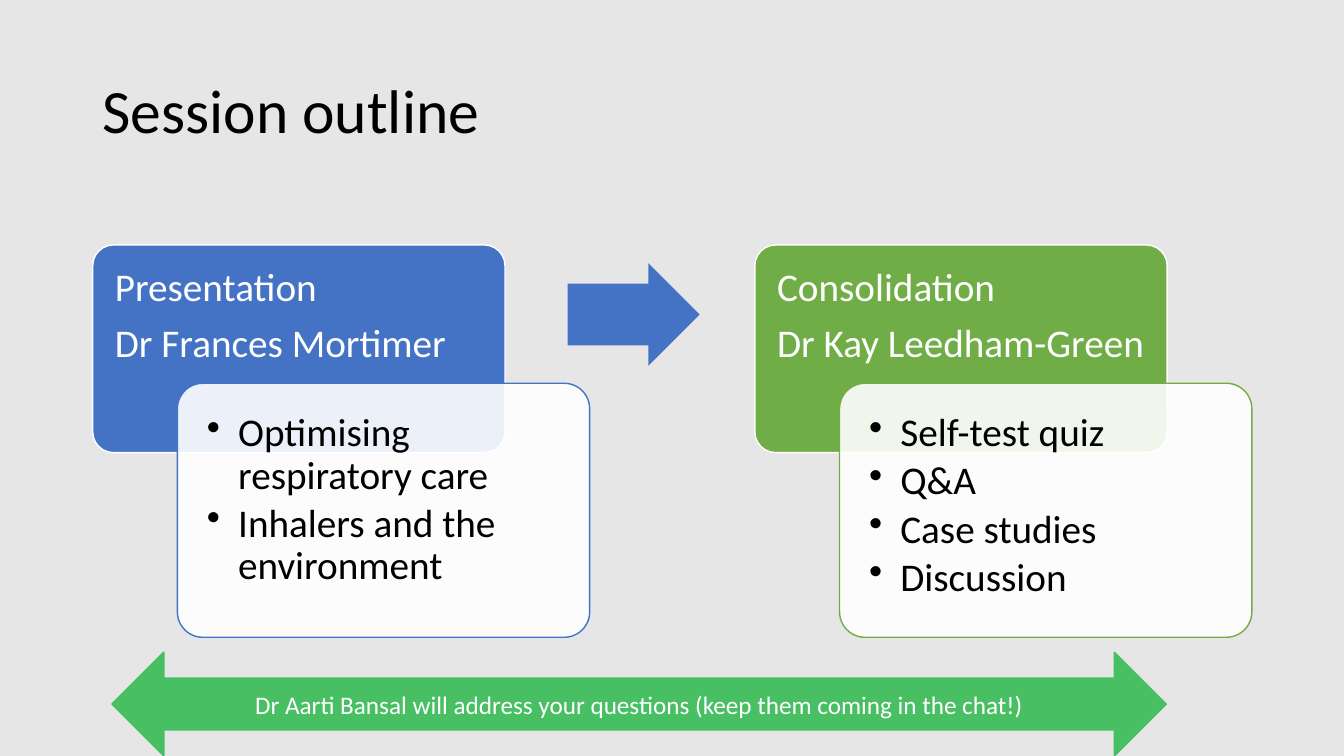
from lxml import etree
from pptx import Presentation
from pptx.dml.color import RGBColor
from pptx.enum.shapes import MSO_SHAPE
from pptx.enum.text import MSO_ANCHOR, PP_ALIGN
from pptx.oxml.ns import qn
from pptx.util import Inches, Pt

ROUNDED = MSO_SHAPE.ROUNDED_RECTANGLE
RIGHT_ARROW = MSO_SHAPE.RIGHT_ARROW
DOUBLE_ARROW = MSO_SHAPE.LEFT_RIGHT_ARROW
TOP, MIDDLE = MSO_ANCHOR.TOP, MSO_ANCHOR.MIDDLE
LEFT, CENTER = PP_ALIGN.LEFT, PP_ALIGN.CENTER

BLACK, WHITE, BACKGROUND = "000000", "FFFFFF", "E7E6E6"
BLUE, GREEN, BRIGHT_GREEN = "4472C4", "70AD47", "49BF64"

# Shares of the slide, in percent
MARGIN = 6.9
CARD_STEP = 49.27
CARD_WIDTH = 30.68
HEADER_TOP, HEADER_HEIGHT = 32.4, 27.47
DETAIL_SHIFT, DETAIL_TOP, DETAIL_HEIGHT = 6.3, 50.7, 33.6

CARDS = [
    (BLUE, ["Presentation", "Dr Frances Mortimer"],
     ["Optimising respiratory care", "Inhalers and the environment"]),
    (GREEN, ["Consolidation", "Dr Kay Leedham-Green"],
     ["Self-test quiz", "Q&A", "Case studies", "Discussion"]),
]


def rgb(hex_color):
    return RGBColor.from_string(hex_color)


class SlideBuilder:
    font = "Calibri"
    body_size = 28

    def __init__(self, prs):
        self.prs = prs
        self.slide = prs.slides.add_slide(prs.slide_layouts[6])
        background = self.slide.background.fill
        background.solid()
        background.fore_color.rgb = rgb(BACKGROUND)

    def place(self, left, top, width, height):
        """Turn percentages of the slide into lengths."""
        across, down = self.prs.slide_width / 100, self.prs.slide_height / 100
        return (round(left * across), round(top * down),
                round(width * across), round(height * down))

    def set_text(self, shape, lines, size, color, anchor=TOP, align=LEFT,
                 inset=(0.1, 0.05, 0.1, 0.05), spacing=0.9, after=0, indent=0):
        """Fill a shape with paragraphs, bulleted when indent is given."""
        frame = shape.text_frame
        frame.word_wrap = True
        frame.vertical_anchor = anchor
        (frame.margin_left, frame.margin_top,
         frame.margin_right, frame.margin_bottom) = map(Inches, inset)
        for number, line in enumerate(lines):
            paragraph = frame.add_paragraph() if number else frame.paragraphs[0]
            paragraph.text = line
            paragraph.alignment = align
            paragraph.line_spacing = spacing
            paragraph.space_after = Pt(after)
            paragraph.font.name = self.font
            paragraph.font.size = Pt(size)
            paragraph.font.color.rgb = rgb(color)
            if indent:
                self.bullet(paragraph, indent)

    def bullet(self, paragraph, indent):
        properties = paragraph.font._element.getparent()
        properties.set("marL", str(Inches(indent)))
        properties.set("indent", str(-Inches(indent)))
        mark = etree.Element(qn("a:buChar"), char="•")
        paragraph.font._element.addprevious(mark)

    def title(self, text, *area):
        box = self.slide.shapes.add_textbox(*self.place(*area))
        self.set_text(box, [text], 44, BLACK, anchor=MIDDLE)

    def shape(self, kind, area, fill, line=None, adjustments=(), opacity=100):
        shape = self.slide.shapes.add_shape(kind, *self.place(*area))
        shape.shadow.inherit = False
        for number, value in enumerate(adjustments):
            shape.adjustments[number] = value
        shape.fill.solid()
        shape.fill.fore_color.rgb = rgb(fill)
        if opacity < 100:
            color = shape.fill._xPr.find(".//" + qn("a:srgbClr"))
            etree.SubElement(color, qn("a:alpha"), val=str(opacity * 1000))
        if line:
            shape.line.color.rgb = rgb(line)
            shape.line.width = Pt(1)
        else:
            shape.line.fill.background()
        return shape

    def card(self, left, color, heading, points):
        """Draw a coloured header with a bulleted panel overlapping it."""
        header = self.shape(ROUNDED, (left, HEADER_TOP, CARD_WIDTH, HEADER_HEIGHT),
                            color, WHITE, [0.1])
        self.set_text(header, heading, self.body_size, WHITE,
                      inset=(0.16, 0.16, 0.12, 0.12), after=9.8)
        detail = self.shape(
            ROUNDED, (left + DETAIL_SHIFT, DETAIL_TOP, CARD_WIDTH, DETAIL_HEIGHT),
            WHITE, color, [0.1], opacity=90)
        self.set_text(detail, points, self.body_size, BLACK,
                      inset=(0.22,) * 4, after=4.2, indent=0.31)


def main():
    prs = Presentation()
    prs.slide_width, prs.slide_height = Inches(13.333), Inches(7.5)
    outline = SlideBuilder(prs)
    outline.title("Session outline", MARGIN, 5.33, 86.25, 19.33)
    for number, (color, heading, points) in enumerate(CARDS):
        outline.card(MARGIN + number * CARD_STEP, color, heading, points)
    outline.shape(RIGHT_ARROW, (42.23, 34.8, 9.83, 13.6), BLUE,
                  adjustments=[0.6, 0.5])
    questions = outline.shape(DOUBLE_ARROW, (8.33, 86.27, 78.45, 13.73),
                              BRIGHT_GREEN, BRIGHT_GREEN)
    outline.set_text(
        questions,
        ["Dr Aarti Bansal will address your questions (keep them coming in the chat!)"],
        18, WHITE, anchor=MIDDLE, align=CENTER, spacing=1.0)
    prs.save("out.pptx")


if __name__ == "__main__":
    main()
